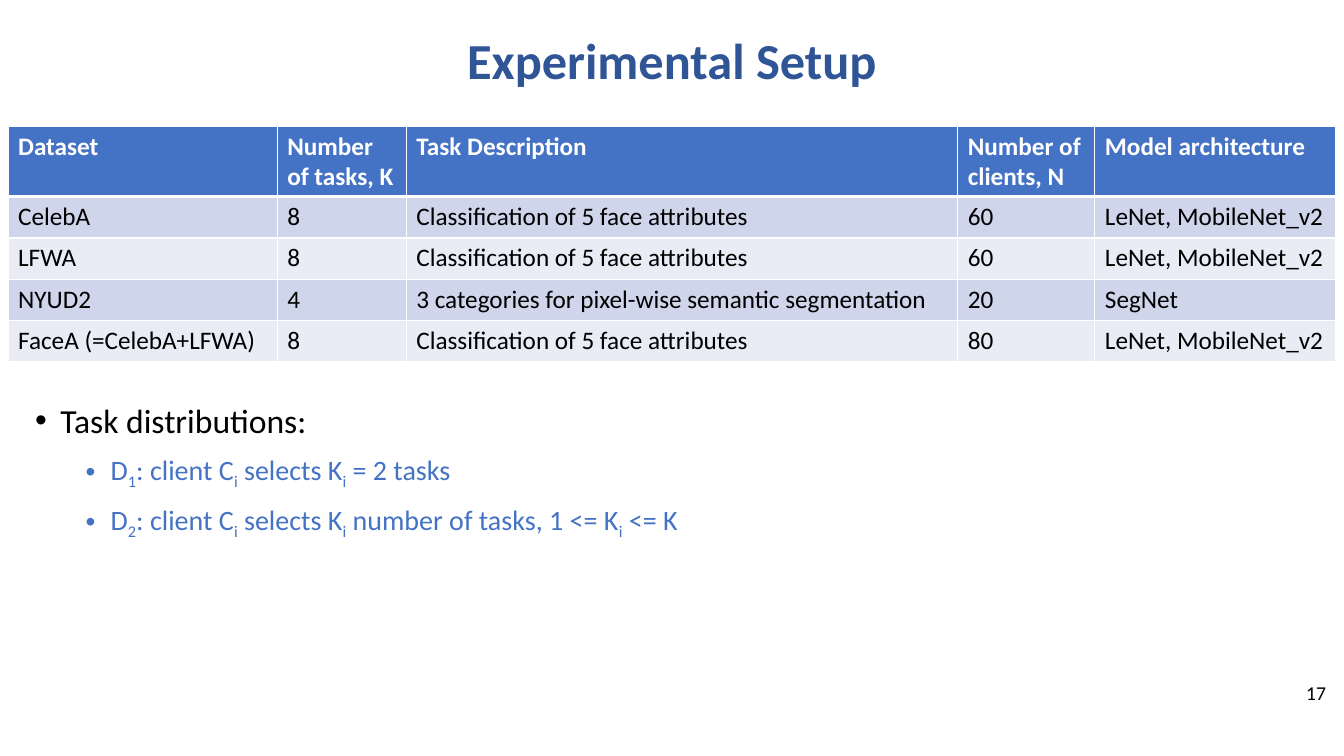
from lxml.etree import SubElement
from pptx import Presentation
from pptx.dml.color import RGBColor
from pptx.enum.text import MSO_ANCHOR as Anchor, PP_ALIGN as Align
from pptx.oxml.ns import qn
from pptx.util import Inches, Pt

NAVY = RGBColor(0x2F, 0x55, 0x97)
BLUE = RGBColor(0x44, 0x72, 0xC4)
BANDS = [RGBColor(0xE9, 0xEB, 0xF5), RGBColor(0xCF, 0xD5, 0xEA)]
WHITE = RGBColor(255, 255, 255)
BLACK = RGBColor(0, 0, 0)


def style(font, color, **values):
    for key, value in {"name": "Calibri", **values}.items():
        setattr(font, key, value)
    font.color.rgb = color


def add_box(left, top, width, height, anchor):
    box = slide.shapes.add_textbox(
        Inches(left), Inches(top), Inches(width), Inches(height))
    frame = box.text_frame
    frame.word_wrap = True
    frame.vertical_anchor = anchor
    return frame


deck = Presentation()
deck.slide_width, deck.slide_height = Inches(13.33), Inches(7.5)
slide = deck.slides.add_slide(deck.slide_layouts[6])

# Title and slide number
labels = [
    ("Experimental Setup", (0.08, 0, 13.17, 1.25), Align.CENTER, 0.9,
     NAVY, {"size": Pt(36), "bold": True}),
    ("17", (10.25, 6.67, 3, 0.4), Align.RIGHT, 1, BLACK, {"size": Pt(14)}),
]
for text, place, align, spacing, color, look in labels:
    para = add_box(*place, Anchor.MIDDLE).paragraphs[0]
    para.text = text
    para.alignment = align
    para.line_spacing = spacing
    style(para.runs[0].font, color, **look)

# Dataset table
faces = "Classification of 5 face attributes"
nets = "LeNet, MobileNet_v2"
rows = [
    ("Dataset", "Number of tasks, K", "Task Description",
     "Number of clients, N", "Model architecture"),
    ("CelebA", "8", faces, "60", nets),
    ("LFWA", "8", faces, "60", nets),
    ("NYUD2", "4", "3 categories for pixel-wise semantic segmentation",
     "20", "SegNet"),
    ("FaceA (=CelebA+LFWA)", "8", faces, "80", nets),
]
widths = [2.67, 1.28, 5.47, 1.36, 2.39]
table = slide.shapes.add_table(
    len(rows), len(widths), Inches(0.08), Inches(1.25),
    Inches(13.17), Inches(2.34)).table
for col, width in zip(table.columns, widths):
    col.width = Inches(width)

for i, row in enumerate(rows):
    head = i == 0
    table.rows[i].height = Inches(0.7 if head else 0.41)
    for j, text in enumerate(row):
        cell = table.cell(i, j)
        cell.text = text
        style(cell.text_frame.paragraphs[0].runs[0].font,
              WHITE if head else BLACK, size=Pt(18), bold=head)
        props = cell._tc.get_or_add_tcPr()
        for side in "LRTB":
            thick = (i, side) in [(0, "B"), (1, "T")]
            line = SubElement(props, qn("a:ln" + side),
                              w=str(Pt(3 if thick else 1)))
            fill = SubElement(line, qn("a:solidFill"))
            SubElement(fill, qn("a:srgbClr"), val=str(WHITE))
        cell.fill.solid()
        cell.fill.fore_color.rgb = BLUE if head else BANDS[i % 2]

# Bullets: text between underscores is subscript
points = [
    ("Task distributions:", 0, 24, BLACK),
    ("D_1_: client C_i_ selects K_i_ = 2 tasks", 1, 20, BLUE),
    ("D_2_: client C_i_ selects K_i_ number of tasks, 1 <= K_i_ <= K",
     1, 20, BLUE),
]
frame = add_box(0.25, 3.86, 13, 1.45, Anchor.TOP)
for n, (text, level, size, color) in enumerate(points):
    para = frame.add_paragraph() if n else frame.paragraphs[0]
    para.level = level
    para.line_spacing = 1.14
    para.space_before = Pt(5 if n else 0)
    props = para._p.get_or_add_pPr()
    props.set("marL", str(Inches(0.25 + 0.5 * level)))
    props.set("indent", str(Inches(-0.25)))
    SubElement(props, qn("a:buFont"), typeface="Arial")
    SubElement(props, qn("a:buChar"), char="•")
    for k, part in enumerate(text.split("_")):
        run = para.add_run()
        run.text = part
        style(run.font, color, size=Pt(size))
        if k % 2:
            run._r.get_or_add_rPr().set("baseline", "-25000")

deck.save("out.pptx")
